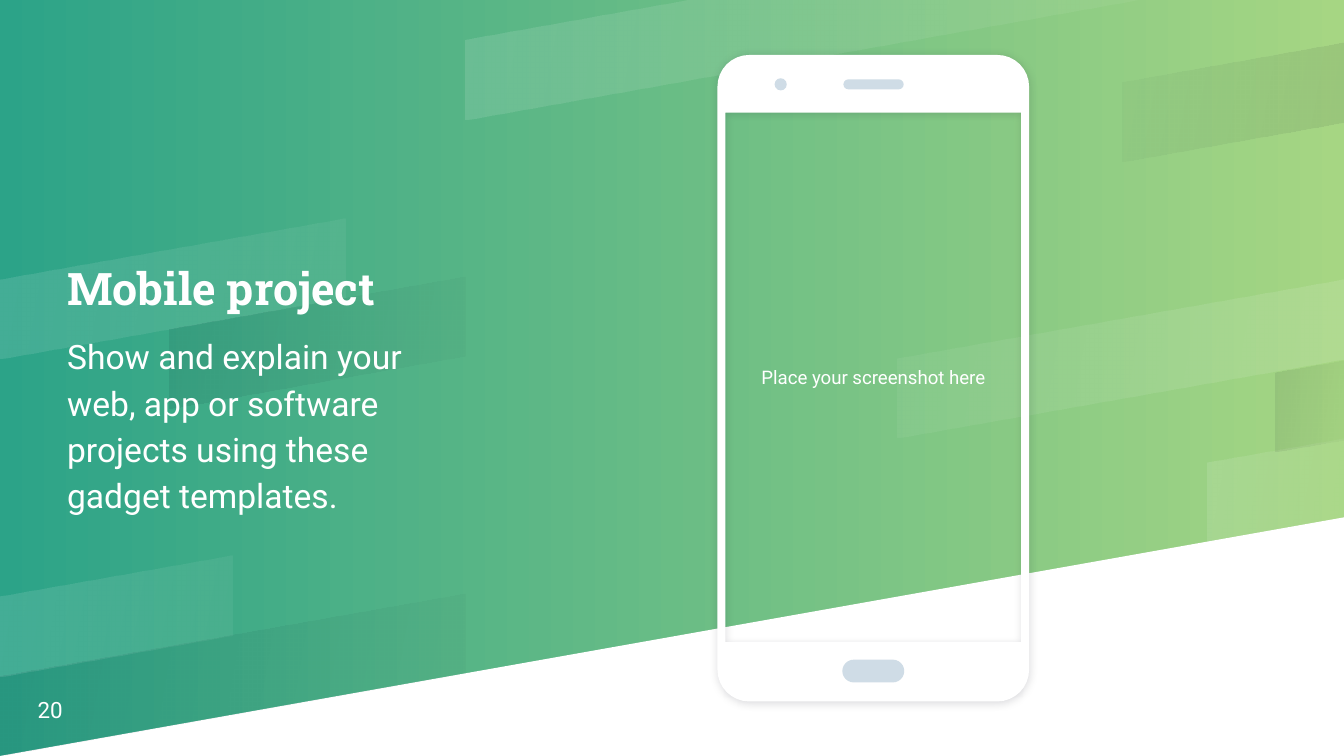
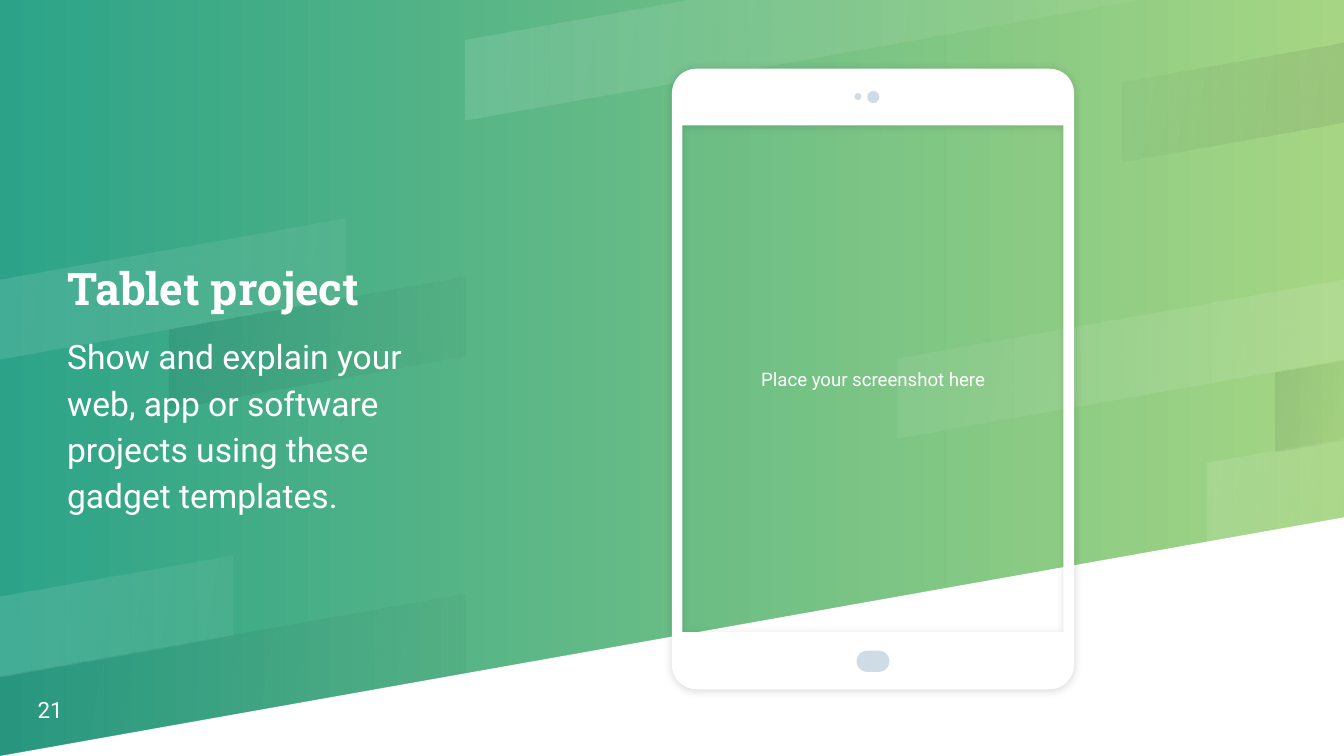
from math import cos, pi, sin

from lxml.etree import SubElement
from pptx import Presentation
from pptx.dml.color import RGBColor as Rgb
from pptx.enum.shapes import MSO_SHAPE as Kind
from pptx.enum.text import MSO_ANCHOR as Anchor, PP_ALIGN as Align
from pptx.oxml.ns import qn
from pptx.util import Cm, Pt

HUES = {"teal": "2CA388", "lime": "A6D683", "white": "FFFFFF",
        "ink": "00001A", "key": "CFDCE6"}
WIDE, HIGH = 25.4, 14.29
SLOPE, THICK = 0.177, 1.5
FADES = {"glow": ("white", 12, 5), "rise": ("white", 5, 12),
         "shade": ("ink", 8, 2), "dusk": ("ink", 2, 8)}
BANDS = [
    (8.79, 0.76, 12.76, "glow"),
    (0, 12.78, 8.79, "shade"),
    (22.83, 8.74, 2.57, "glow"),
    (0, 11.28, 4.39, "glow"),
    (24.1, 7.04, 1.3, "shade"),
    (16.97, 6.78, 8.43, "rise"),
    (3.2, 6.22, 5.59, "shade"),
    (0, 5.28, 6.53, "glow"),
    (21.21, 1.55, 4.19, "dusk"),
]
PHONE = {"box": (13.56, 1.04, 5.89, 12.22), "curve": 0.6,
         "side": 0.15, "top": 1.09, "tall": 10.01,
         "keys": [(2.36, 11.43, 1.17, 0.43), (1.08, 0.44, 0.23, 0.23),
                  (2.38, 0.46, 1.14, 0.19)]}
TABLET = {"box": (12.7, 1.3, 7.6, 11.73), "curve": 0.46,
          "side": 0.2, "top": 1.07, "tall": 9.58,
          "keys": [(3.49, 11, 0.62, 0.4), (3.45, 0.46, 0.13, 0.13),
                   (3.69, 0.42, 0.23, 0.23)]}
PITCH = ("Show and explain your web, app or software projects "
         "using these gadget templates.")
PAGES = [("Mobile project", "20", PHONE), ("Tablet project", "21", TABLET)]


def hue(name):
    return Rgb.from_string(HUES[name])


def blend(fill, names, angle):
    fill.gradient()
    fill.gradient_angle = angle
    for stop, name in zip(fill.gradient_stops, names):
        stop.color.rgb = hue(name)


def paint(shape, name):
    shape.shadow.inherit = False
    shape.line.fill.background()
    shape.fill.solid()
    shape.fill.fore_color.rgb = hue(name)


def outline(shapes, *loops):
    loops = [[(Cm(x), Cm(y)) for x, y in loop] for loop in loops]
    path = shapes.build_freeform(*loops[0][0], scale=1.0)
    for loop in loops:
        if loop is not loops[0]:
            path.move_to(*loop[0])
        path.add_line_segments(loop[1:], close=True)
    shape = path.convert_to_shape()
    paint(shape, "white")
    return shape


def band(shapes, x, y, width, fade):
    end = x + width
    peak = y - SLOPE * width
    foot = max(peak + THICK, 0)
    ridge = [(end, peak)] if peak >= 0 else [(x + y / SLOPE, 0)]
    shape = outline(shapes, [(x, y), *ridge, (end, foot), (x, y + THICK)])
    name, *alphas = FADES[fade]
    blend(shape.fill, (name, name), 350)
    tones = shape.element.spPr.iter(qn("a:srgbClr"))
    for tone, alpha in zip(tones, alphas):
        SubElement(tone, qn("a:alpha"), val=str(alpha * 1000))


def backdrop(slide, layout):
    blend(layout.background.fill, ("teal", "lime"), 0)
    group = slide.shapes.add_group_shape()
    outline(group.shapes, [(0, HIGH), (WIDE, HIGH), (WIDE, 9.78)])
    for item in BANDS:
        band(group.shapes, *item)
    layout.shapes.element.insert(2, group.element)


def write(shape, box, text, size, anchor, font="Roboto", bold=False,
          align=Align.LEFT, space=1.0):
    shape.left, shape.top, shape.width, shape.height = map(Cm, box)
    frame = shape.text_frame
    frame.text = text
    frame.word_wrap = True
    frame.vertical_anchor = anchor
    frame.margin_left = frame.margin_right = 0
    frame.margin_top = frame.margin_bottom = 0
    para = frame.paragraphs[0]
    para.alignment = align
    para.line_spacing = space
    para.font.name = font
    para.font.size = Pt(size)
    para.font.bold = bold
    para.font.color.rgb = hue("white")


def label(slide, *args, **style):
    write(slide.shapes.add_textbox(0, 0, 0, 0), *args, **style)


def story(slide, box, title):
    x, y, width, height = box
    head = 1.27
    write(slide.shapes.title, (x, y, width, head), title, 24, Anchor.BOTTOM,
          font="Roboto Slab", bold=True)
    gap = 0.3
    label(slide, (x, y + head + gap, width, height - head - gap), PITCH, 18,
          Anchor.TOP, space=1.15)


def curved(x, y, width, height, radius, steps=8):
    hubs = [(x + width - radius, y + height - radius),
            (x + radius, y + height - radius),
            (x + radius, y + radius), (x + width - radius, y + radius)]
    turns = [(hub, (turn + step / steps) * pi / 2)
             for turn, hub in enumerate(hubs) for step in range(steps + 1)]
    return [(a + radius * cos(t), b + radius * sin(t)) for (a, b), t in turns]


def shade(shape):
    cast = SubElement(shape.element.spPr.find(qn("a:effectLst")),
                      qn("a:outerShdw"), blurRad=str(Pt(4.5)),
                      dist=str(Pt(0.8)), dir="5400000", algn="bl",
                      rotWithShape="0")
    tone = SubElement(cast, qn("a:srgbClr"), val=HUES["ink"])
    SubElement(tone, qn("a:alpha"), val="15000")


def device(slide, box, curve, side, top, tall, keys):
    x, y, width, height = box
    left, right = x + side, x + width - side
    roof, floor = y + top, y + top + tall
    label(slide, (left, roof, right - left, tall), "Place your screenshot here",
          10, Anchor.MIDDLE, align=Align.CENTER)
    group = slide.shapes.add_group_shape()
    hole = [(right, roof), (right, floor), (left, floor), (left, roof)]
    shade(outline(group.shapes, hole, curved(*box, curve)))
    for dx, dy, wide, high in keys:
        kind = Kind.OVAL if wide == high else Kind.ROUNDED_RECTANGLE
        key = group.shapes.add_shape(kind, Cm(x + dx), Cm(y + dy),
                                     Cm(wide), Cm(high))
        if wide != high:
            key.adjustments[0] = 0.5
        paint(key, "key")


def main():
    deck = Presentation()
    deck.slide_width, deck.slide_height = Cm(WIDE), Cm(HIGH)
    layout = deck.slide_layouts[5]
    for title, number, gadget in PAGES:
        slide = deck.slides.add_slide(layout)
        if len(deck.slides) == 1:
            backdrop(slide, layout)
        story(slide, (1.27, 4.67, 7.62, 5.2), title)
        label(slide, (0.71, 12.98, 1.35, 0.69), number, 12, Anchor.BOTTOM)
        device(slide, **gadget)
    deck.save("out.pptx")


if __name__ == "__main__":
    main()
